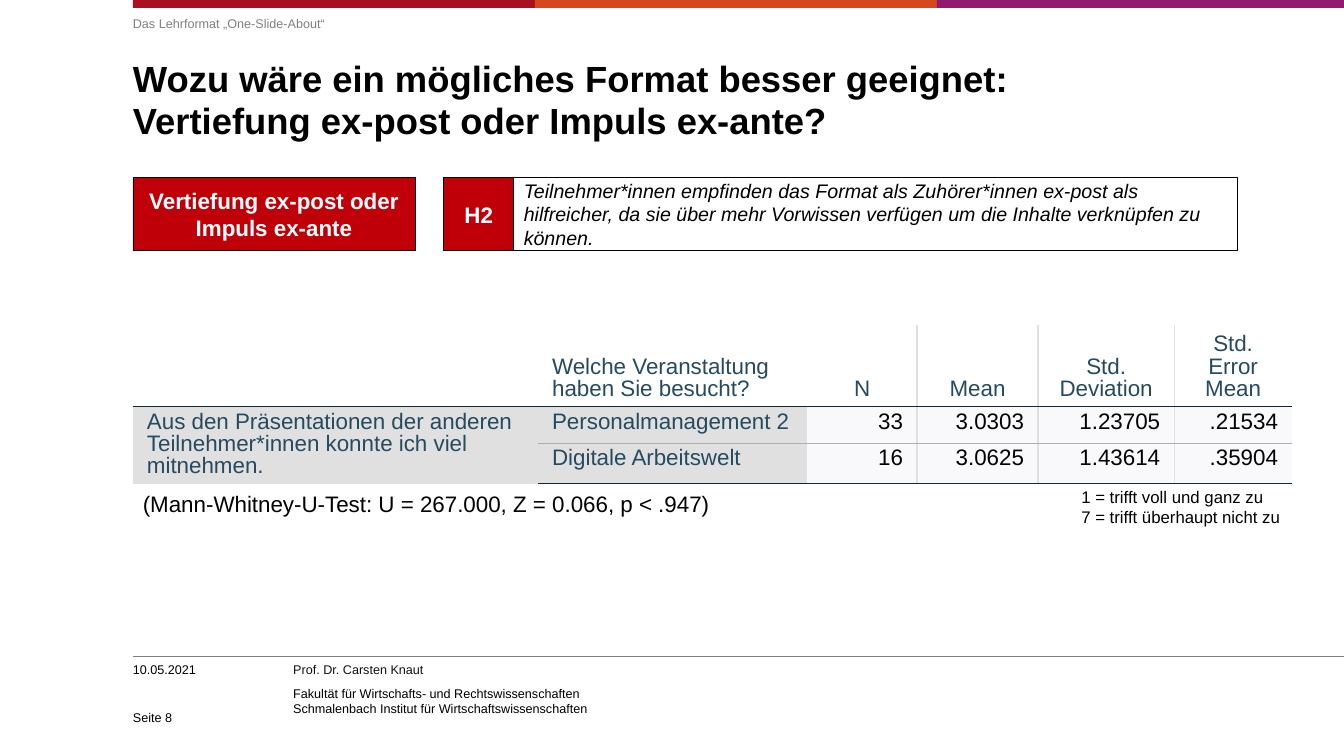
"""Build the slide on hypothesis H2 of the teaching format survey."""
from copy import deepcopy
from dataclasses import dataclass, field
from typing import Any

from lxml import etree
from pptx import Presentation
from pptx import util as u
from pptx.dml.color import RGBColor
from pptx.enum import shapes, text
from pptx.oxml.ns import qn

COLORS = {
    "black": "000000", "white": "FFFFFF", "grey": "808080", "name": "141313",
    "stripe_red": "AA0F1F", "stripe_orange": "D7471F", "stripe_purple": "901B6E",
    "red": "C00009", "label": "264A60", "value": "010205", "stub": "E0E0E0",
    "data": "F9F9FB", "ink": "152935", "row_rule": "AEAEAE",
}
LEFT = 3.35
PLAIN_STYLE = "{2D5ABB26-0587-4C30-8999-92F81FD0307C}"
ALIGN, ANCHOR = text.PP_ALIGN, text.MSO_ANCHOR
SMALL = {"size": u.Pt(9)}
STRONG = {"size": u.Pt(16), "bold": True}
TABLE_FONT = {"size": u.Pt(16)}
CENTER = {"alignment": ALIGN.CENTER}
GAP = {"space_after": u.Pt(6)}


@dataclass
class Line:
    words: str
    color: str = "black"
    layout: dict[str, Any] = field(default_factory=dict)


@dataclass
class Label:
    place: tuple[float, float, float, float]
    lines: list[Line]
    font: dict[str, Any]
    anchor: Any = ANCHOR.TOP
    margin: float = 0
    wrap: bool = True
    fill: str = ""


STRIPES = [(LEFT, 10.13, "stripe_red"), (13.48, 10.13, "stripe_orange"),
           (23.61, 10.26, "stripe_purple")]

LABELS = [
    Label((7.39, 16.69, 10.95, 1.52), [
        Line("Prof. Dr. Carsten Knaut", "name", GAP),
        Line("Fakultät für Wirtschafts- und Rechtswissenschaften\v"
             "Schmalenbach Institut für Wirtschaftswissenschaften", layout=GAP)], SMALL),
    Label((LEFT, 1.45, 30, 2.49), [
        Line("Wozu wäre ein mögliches Format besser geeignet: \v"
             "Vertiefung ex-post oder Impuls ex-ante?",
             layout={"line_spacing": u.Pt(30)})], {"size": u.Pt(26), "bold": True}),
    Label((LEFT, 0.41, 29.97, 0.61),
          [Line("Das Lehrformat „One-Slide-About“", "grey", GAP)], SMALL),
    Label((LEFT, 16.69, 3.61, 0.51), [Line("10.05.2021")], SMALL),
    Label((LEFT, 17.68, 3.61, 0.58), [Line("Seite 8")], SMALL, ANCHOR.BOTTOM),
    Label((LEFT, 12.22, 14.99, 0.94),
          [Line("(Mann-Whitney-U-Test: U = 267.000, Z = 0.066, p < .947)")],
          TABLE_FONT, margin=0.25, wrap=False),
    Label((12.95, 4.47, 18.24, 1.85), [
        Line("Teilnehmer*innen empfinden das Format als Zuhörer*innen ex-post als "
             "hilfreicher, da sie über mehr Vorwissen verfügen um die Inhalte "
             "verknüpfen zu können.", layout={"alignment": ALIGN.LEFT})],
          {"size": u.Pt(14), "italic": True}, ANCHOR.MIDDLE, 0.25, fill="white"),
    Label((11.18, 4.47, 1.77, 1.85), [Line("H2", "white", CENTER)],
          STRONG, ANCHOR.MIDDLE, 0.25, fill="red"),
    Label((LEFT, 4.47, 7.11, 1.85),
          [Line("Vertiefung ex-post oder Impuls ex-ante", "white", CENTER)],
          STRONG, ANCHOR.MIDDLE, 0.25, fill="red"),
    Label((27, 12.14, 5.56, 1.27),
          [Line("1 = trifft voll und ganz zu"), Line("7 = trifft überhaupt nicht zu")],
          {"size": u.Pt(12)}, margin=0.25, wrap=False),
]

COLUMNS = [10.21, 6.78, 2.77, 3.05, 3.43, 2.97]
ROWS = [2.04, 0.93, 0.99]
STATISTICS = [
    ["", "Welche Veranstaltung haben Sie besucht?", "N", "Mean", "Std. Deviation",
     "Std. Error Mean"],
    ["Aus den Präsentationen der anderen Teilnehmer*innen konnte ich viel mitnehmen.",
     "Personalmanagement 2", "33", "3.0303", "1.23705", ".21534"],
    ["", "Digitale Arbeitswelt", "16", "3.0625", "1.43614", ".35904"],
]


def rgb(name: str) -> RGBColor:
    return RGBColor.from_string(COLORS[name])


def write_line(para: Any, line: Line, font: dict[str, Any]) -> None:
    para.text = line.words
    for key, value in line.layout.items():
        setattr(para, key, value)
    for span in para.runs:
        for key, value in {"name": "Arial", **font}.items():
            setattr(span.font, key, value)
        span.font.color.rgb = rgb(line.color)
    for line_break in para._p.findall(qn("a:br")):
        line_break.append(deepcopy(para.runs[0]._r.rPr))


def add_block(page: Any, place: tuple[float, ...], fill: str) -> Any:
    block = page.shapes.add_shape(shapes.MSO_SHAPE.RECTANGLE, *map(u.Cm, place))
    block.shadow.inherit = False
    block.fill.solid()
    block.fill.fore_color.rgb = rgb(fill)
    block.line.fill.background()
    return block


def add_label(page: Any, label: Label) -> None:
    if label.fill:
        box = add_block(page, label.place, label.fill)
        box.line.color.rgb = rgb("black")
        box.line.width = u.Pt(0.5)
    else:
        box = page.shapes.add_textbox(*map(u.Cm, label.place))
    frame = box.text_frame
    side, edge = u.Cm(label.margin), u.Cm(label.margin / 2)
    settings = {"word_wrap": label.wrap, "vertical_anchor": label.anchor,
                "margin_left": side, "margin_right": side,
                "margin_top": edge, "margin_bottom": edge}
    if not label.wrap:
        settings["auto_size"] = text.MSO_AUTO_SIZE.SHAPE_TO_FIT_TEXT
    for key, value in settings.items():
        setattr(frame, key, value)
    for index, line in enumerate(label.lines):
        para = frame.add_paragraph() if index else frame.paragraphs[0]
        write_line(para, line, label.font)


def add_borders(cell: Any, row: int, column: int) -> None:
    inner = "row_rule" if column else ""
    borders = {
        "lnL": "stub" if column > 2 else "",
        "lnR": "stub" if 2 <= column < len(COLUMNS) - 1 else "",
        "lnT": ["", "ink", inner][row],
        "lnB": ["ink", inner, "ink"][row],
    }
    for tag, color in borders.items():
        if color:
            edge = etree.SubElement(cell._tc.get_or_add_tcPr(), qn(f"a:{tag}"), w="12700")
            solid = etree.SubElement(edge, qn("a:solidFill"))
            etree.SubElement(solid, qn("a:srgbClr"), val=COLORS[color])


def fill_cell(cell: Any, row: int, column: int) -> None:
    is_value = row > 0 and column > 1
    add_borders(cell, row, column)
    if row or column:
        cell.fill.solid()
        cell.fill.fore_color.rgb = rgb("white" if not row else "data" if is_value else "stub")
    else:
        cell.fill.background()
    cell.vertical_anchor = ANCHOR.TOP if row else ANCHOR.BOTTOM
    align = ALIGN.LEFT if column < 2 else ALIGN.RIGHT if row else ALIGN.CENTER
    para = cell.text_frame.paragraphs[0]
    write_line(para, Line(STATISTICS[row][column], "value" if is_value else "label",
                          {"alignment": align, "line_spacing": u.Pt(16)}), TABLE_FONT)
    for side in ("marL", "marR"):
        para._p.get_or_add_pPr().set(side, str(u.Cm(0.1)))


def add_statistics(page: Any) -> None:
    place = (LEFT, 8.2, sum(COLUMNS), sum(ROWS))
    table = page.shapes.add_table(len(ROWS), len(COLUMNS), *map(u.Cm, place)).table
    table.first_row = table.horz_banding = False
    table._tbl.tblPr.find(qn("a:tableStyleId")).text = PLAIN_STYLE
    for column, width in zip(table.columns, COLUMNS):
        column.width = u.Cm(width)
    for row, height in enumerate(ROWS):
        table.rows[row].height = u.Cm(height)
        for column in range(len(COLUMNS)):
            fill_cell(table.cell(row, column), row, column)
    table.cell(1, 0).merge(table.cell(2, 0))


def add_footer_rule(page: Any) -> None:
    ends = map(u.Cm, (LEFT, 16.54, 33.87, 16.54))
    rule = page.shapes.add_connector(shapes.MSO_CONNECTOR.STRAIGHT, *ends)
    rule.line.color.rgb = rgb("grey")
    rule.line.width = u.Pt(0.5)
    etree.SubElement(rule._element.spPr, qn("a:effectLst"))


def main() -> None:
    deck = Presentation()
    deck.slide_width, deck.slide_height = u.Cm(33.87), u.Cm(19.05)
    page = deck.slides.add_slide(deck.slide_layouts[6])
    for left, width, color in STRIPES:
        add_block(page, (left, 0, width, 0.2), color)
    add_footer_rule(page)
    add_statistics(page)
    for label in LABELS:
        add_label(page, label)
    deck.save("out.pptx")


if __name__ == "__main__":
    main()
